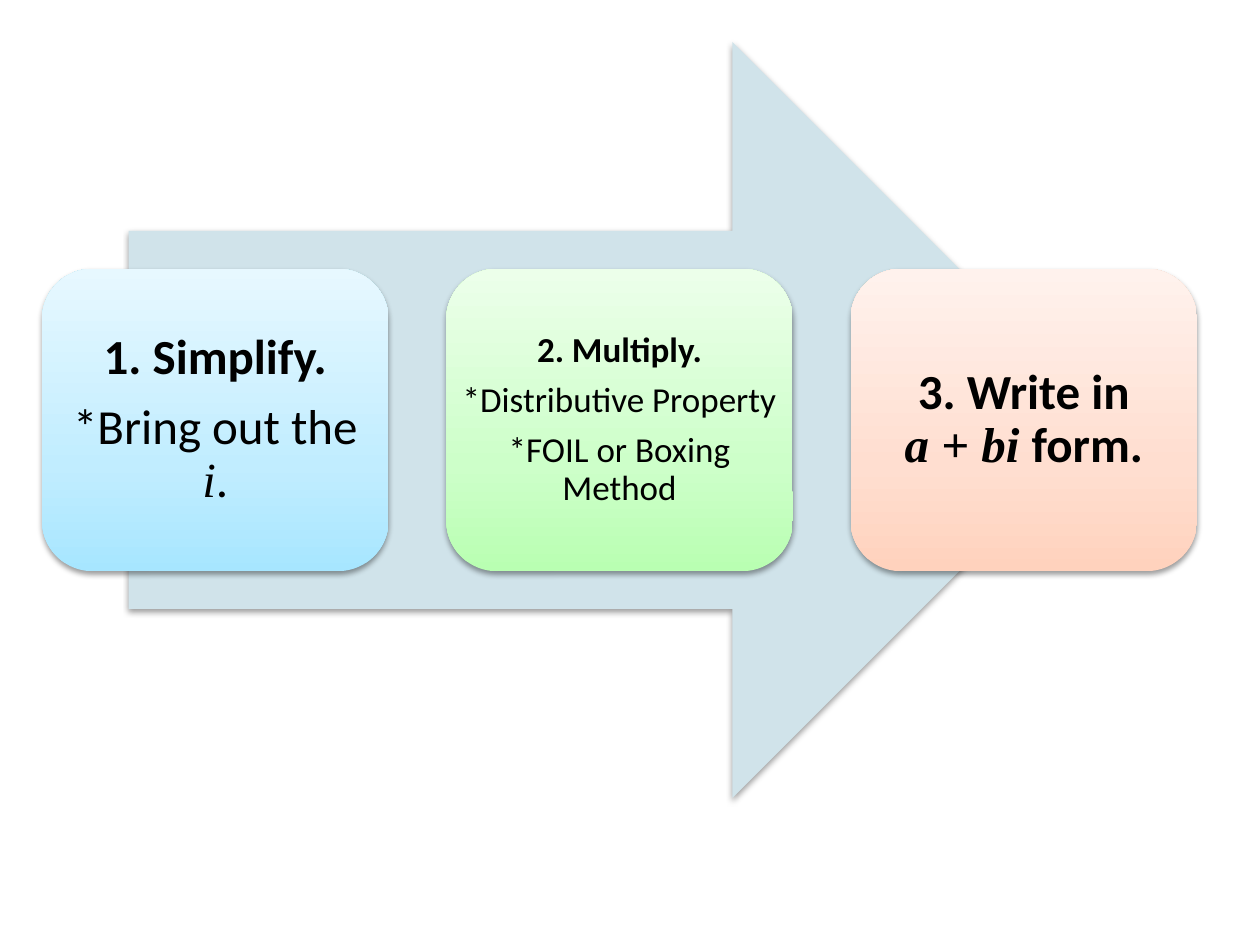
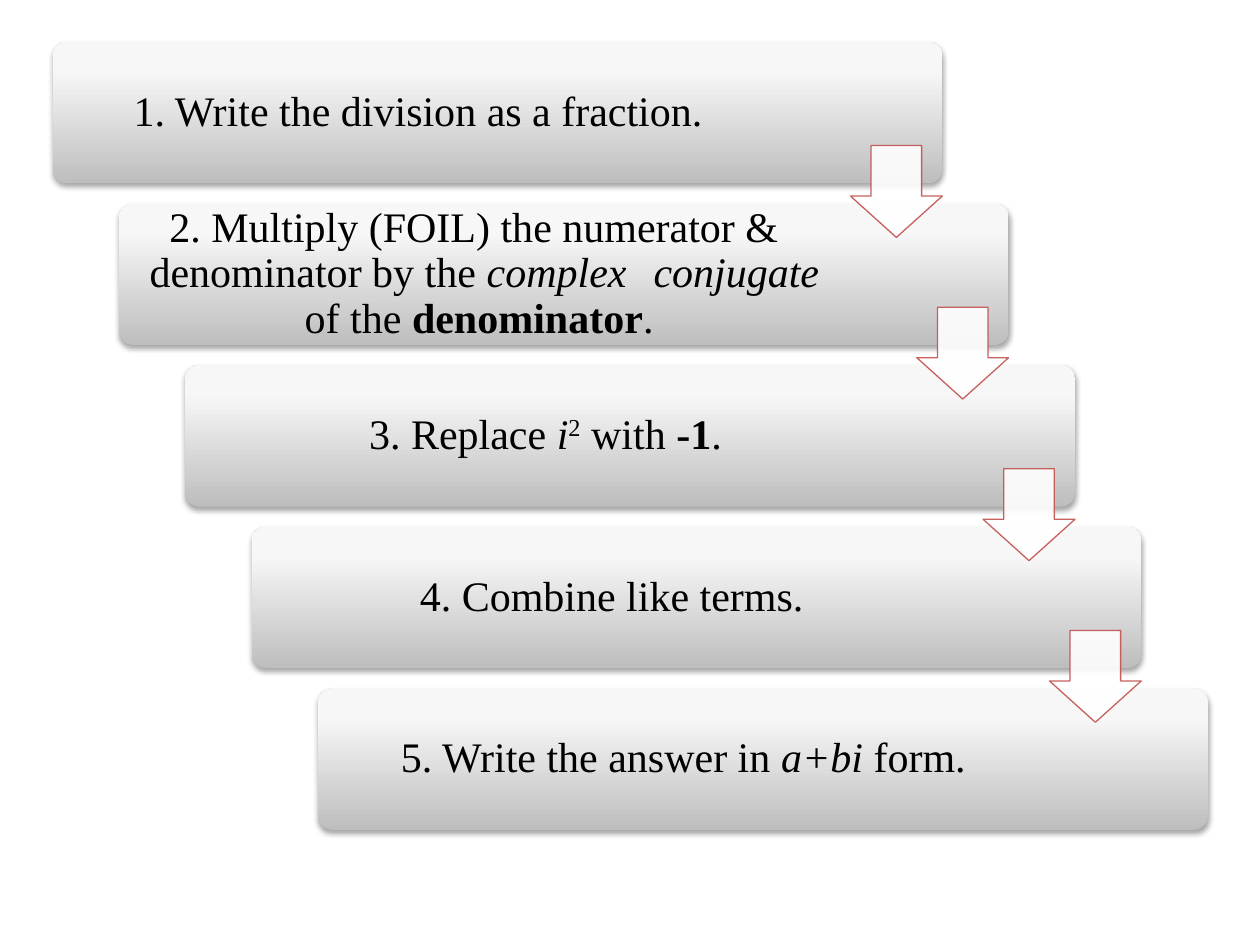
from lxml.etree import SubElement
from pptx import Presentation
from pptx.dml.color import RGBColor
from pptx.enum.shapes import MSO_SHAPE
from pptx.enum.text import MSO_ANCHOR, PP_ALIGN
from pptx.oxml.ns import qn
from pptx.util import Pt

SANS, SERIF = "Calibri", "Times New Roman"
BLACK, WHITE, RED, PALE_BLUE = "000000", "FFFFFF", "C0504D", "D0E3EA"
GREYS = [(0, "BEBEBE"), (80, "F7F7F7"), (100, "F8F8F8")]
BOLD, ITALIC, PLAIN = {"bold": True}, {"italic": True}, {}
MATH = {"italic": True, "font": SERIF}
BOLD_MATH = {**BOLD, **MATH}

CARDS = [
    {"colors": ("A7E6FF", "C1EDFF", "E7F8FF"), "size": 28, "inset": 8.4, "gap": 0.35,
     "paragraphs": [[("1. Simplify.", BOLD)],
                    [("*Bring out the ", PLAIN), ("i", MATH), (".", PLAIN)]]},
    {"colors": ("B9FFB2", "CDFFC9", "ECFFEA"), "size": 20, "inset": 6, "gap": 0.35,
     "paragraphs": [[("2. Multiply.", BOLD)],
                    [("*Distributive Property", PLAIN)],
                    [("*FOIL or Boxing Method", PLAIN)]]},
    {"colors": ("FFD2BD", "FFDED0", "FFF2ED"), "size": 28, "inset": 8.4, "gap": 0,
     "paragraphs": [[("3. Write in", BOLD)],
                    [("a + bi ", BOLD_MATH), ("form.", BOLD)]]},
]
STEPS = [
    [("1. Write the division as a fraction.", PLAIN)],
    [("2. Multiply (FOIL) the numerator & \tdenominator by the ", PLAIN),
     ("complex \tconjugate", ITALIC), (" of the ", PLAIN),
     ("denominator", BOLD), (". ", PLAIN)],
    [("3. Replace ", PLAIN), ("i", ITALIC), ("2", {"raised": True}),
     (" with ", PLAIN), ("-1", BOLD), (". ", PLAIN)],
    [("4. Combine like terms. ", PLAIN)],
    [("5. Write the answer in ", PLAIN), ("a+bi ", ITALIC), ("form.", PLAIN)],
]


def color(value):
    return RGBColor.from_string(value)


def add_color(parent, value, alpha=100):
    element = SubElement(parent, qn("a:srgbClr"), val=value)
    SubElement(element, qn("a:alpha"), val=str(alpha * 1000))


def add_figure(page, kind, place, adjustments=()):
    shape = page.shapes.add_shape(kind, *map(Pt, place))
    for index, value in enumerate(adjustments):
        shape.adjustments[index] = value
    shape.line.fill.background()
    shape.shadow.inherit = False
    return shape


def fill_gradient(shape, stops):
    shape.fill.gradient()
    shape.fill.gradient_angle = 90
    stop_list = shape.element.spPr.find(qn("a:gradFill")).find(qn("a:gsLst"))
    for stop in list(stop_list):
        stop_list.remove(stop)
    for position, value in stops:
        add_color(SubElement(stop_list, qn("a:gs"), pos=str(position * 1000)), value)


def add_shadow(shape, alpha, distance):
    effects = shape.element.spPr.find(qn("a:effectLst"))
    shadow = SubElement(effects, qn("a:outerShdw"), blurRad=str(Pt(3.1)),
                        dist=str(Pt(distance)), dir="5400000", rotWithShape="0")
    add_color(shadow, BLACK, alpha)


def make_translucent(fill_parent, alpha):
    element = fill_parent.find(qn("a:solidFill")).find(qn("a:srgbClr"))
    SubElement(element, qn("a:alpha"), val=str(alpha * 1000))


def add_span(para, text, font=SANS, size=24, bold=False, italic=False, raised=False):
    span = para.add_run()
    span.text = text
    span.font.name, span.font.size = font, Pt(size)
    span.font.bold, span.font.italic = bold, italic
    span.font.color.rgb = color(BLACK)
    if raised:
        span.font._element.set("baseline", "30000")


def add_text(page, place, paragraphs, inset, gap, **base):
    frame = page.shapes.add_textbox(*map(Pt, place)).text_frame
    frame.word_wrap = True
    frame.vertical_anchor = MSO_ANCHOR.MIDDLE
    frame.margin_left = frame.margin_right = Pt(inset)
    frame.margin_top = frame.margin_bottom = Pt(inset)
    for index, spans in enumerate(paragraphs):
        para = frame.add_paragraph() if index else frame.paragraphs[0]
        para.alignment = PP_ALIGN.CENTER
        para.line_spacing = 0.9
        para.space_after = Pt(gap * base["size"])
        for text, extra in spans:
            add_span(para, text, **{**base, **extra})


def build_process(page):
    left, top, width, height = 73.5, 24, 561, 432
    arrow = add_figure(page, MSO_SHAPE.RIGHT_ARROW, (left, top, width, height))
    arrow.fill.solid()
    arrow.fill.fore_color.rgb = color(PALE_BLUE)
    add_shadow(arrow, 38, 1.6)
    card_width, card_height, pitch = 198, 0.4 * height, 231
    card_top = top + (height - card_height) / 2
    for index, card in enumerate(CARDS):
        place = (24 + index * pitch, card_top, card_width, card_height)
        shape = add_figure(page, MSO_SHAPE.ROUNDED_RECTANGLE, place)
        fill_gradient(shape, zip((0, 35, 100), card["colors"]))
        add_shadow(shape, 38, 1.6)
        add_text(page, place, card["paragraphs"], card["inset"], card["gap"],
                 size=card["size"])


def build_staircase(page):
    width, height, text_width, arrow_size = 508.4, 80.8, 417.6, 52.5
    places = [(30.1 + 37.9 * index, 24 + 92.35 * index) for index in range(len(STEPS))]
    for (left, top), spans in zip(places, STEPS):
        bar = add_figure(page, MSO_SHAPE.ROUNDED_RECTANGLE, (left, top, width, height), [0.1])
        fill_gradient(bar, GREYS)
        add_shadow(bar, 35, 1.8)
        add_text(page, (left, top, text_width, height), [spans], 7.2, 0.35,
                 font=SERIF, size=24)
    for left, top in places[:-1]:
        place = (left + width - arrow_size, top + 59.2, arrow_size, arrow_size)
        arrow = add_figure(page, MSO_SHAPE.DOWN_ARROW, place, [0.55, 0.45])
        arrow.fill.solid()
        arrow.fill.fore_color.rgb = color(WHITE)
        arrow.line.color.rgb = color(RED)
        arrow.line.width = Pt(0.75)
        properties = arrow.element.spPr
        make_translucent(properties, 90)
        make_translucent(properties.find(qn("a:ln")), 90)


def main():
    """Build the two slides on complex numbers."""
    deck = Presentation()
    deck.slide_width, deck.slide_height = Pt(720), Pt(540)
    for build in (build_process, build_staircase):
        build(deck.slides.add_slide(deck.slide_layouts[6]))
    deck.save("out.pptx")


if __name__ == "__main__":
    main()
